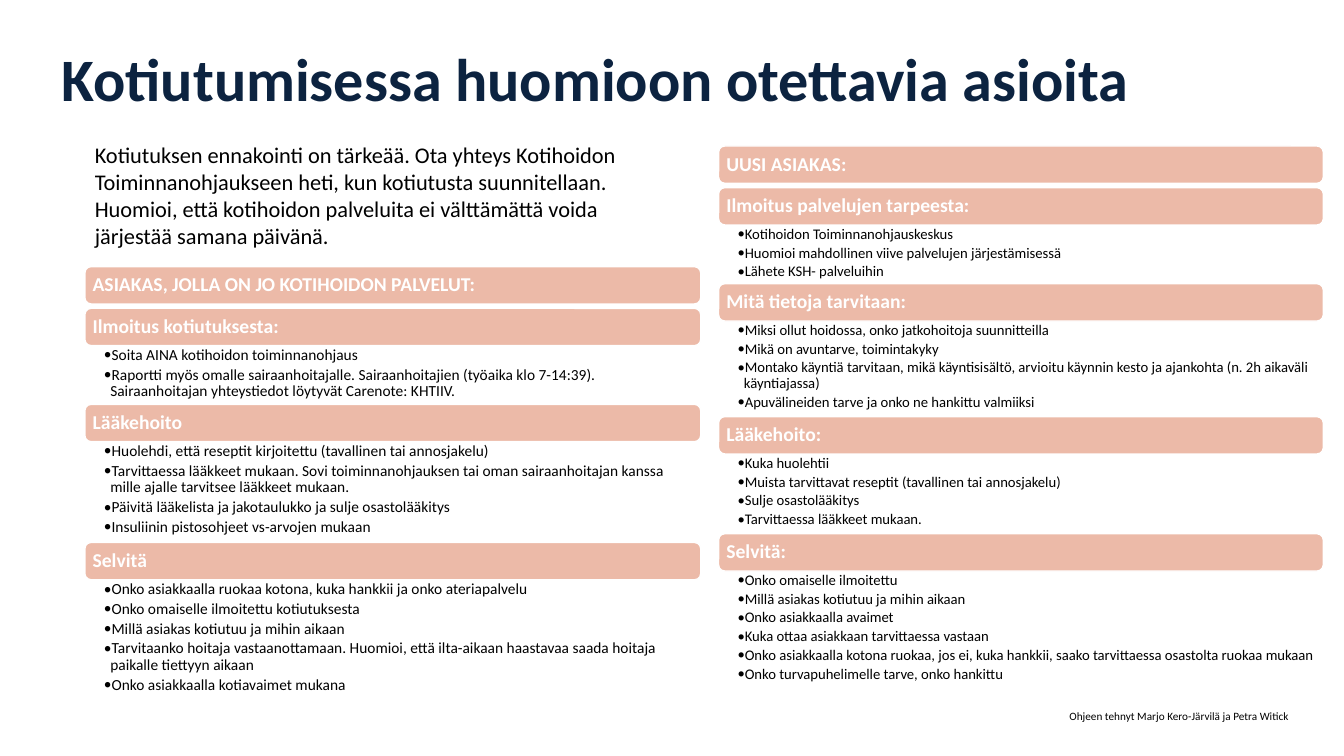
from lxml import etree
from pptx import Presentation
from pptx import util as u
from pptx.dml import color
from pptx.enum import shapes, text
from pptx.oxml import ns

FONT = "Calibri"
BAR = 0.94   # height of a heading bar
GAP = 0.11   # space below a bar that has no bullets

# Each part: heading, height of its bullet area, bullets
HOME = [
    ("ASIAKAS, JOLLA ON JO KOTIHOIDON PALVELUT:", GAP, []),
    ("Ilmoitus kotiutuksesta:", 1.48, [
        "Soita AINA kotihoidon toiminnanohjaus",
        "Raportti myös omalle sairaanhoitajalle. Sairaanhoitajien (työaika klo 7-14:39). "
        "Sairaanhoitajan yhteystiedot löytyvät Carenote: KHTIIV."]),
    ("Lääkehoito", 2.54, [
        "Huolehdi, että reseptit kirjoitettu (tavallinen tai annosjakelu)",
        "Tarvittaessa lääkkeet mukaan. Sovi toiminnanohjauksen tai oman sairaanhoitajan "
        "kanssa mille ajalle tarvitsee lääkkeet mukaan.",
        "Päivitä lääkelista ja jakotaulukko ja sulje osastolääkitys",
        "Insuliinin pistosohjeet vs-arvojen mukaan"]),
    ("Selvitä", 3.05, [
        "Onko asiakkaalla ruokaa kotona, kuka hankkii ja onko ateriapalvelu",
        "Onko omaiselle ilmoitettu kotiutuksesta",
        "Millä asiakas kotiutuu ja mihin aikaan",
        "Tarvitaanko hoitaja vastaanottamaan. Huomioi, että ilta-aikaan haastavaa saada "
        "hoitaja paikalle tiettyyn aikaan",
        "Onko asiakkaalla kotiavaimet mukana"]),
]
NEW = [
    ("UUSI ASIAKAS:", GAP, []),
    ("Ilmoitus palvelujen tarpeesta:", 1.48, [
        "Kotihoidon Toiminnanohjauskeskus",
        "Huomioi mahdollinen viive palvelujen järjestämisessä",
        "Lähete KSH- palveluihin"]),
    ("Mitä tietoja tarvitaan:", 2.41, [
        "Miksi ollut hoidossa, onko jatkohoitoja suunnitteilla",
        "Mikä on avuntarve, toimintakyky",
        "Montako käyntiä tarvitaan, mikä käyntisisältö, arvioitu käynnin kesto ja "
        "ajankohta (n. 2h aikaväli käyntiajassa)",
        "Apuvälineiden tarve ja onko ne hankittu valmiiksi"]),
    ("Lääkehoito:", 2.01, [
        "Kuka huolehtii",
        "Muista tarvittavat reseptit (tavallinen tai annosjakelu)",
        "Sulje osastolääkitys",
        "Tarvittaessa lääkkeet mukaan."]),
    ("Selvitä:", 2.97, [
        "Onko omaiselle ilmoitettu",
        "Millä asiakas kotiutuu ja mihin aikaan",
        "Onko asiakkaalla avaimet",
        "Kuka ottaa asiakkaan tarvittaessa vastaan",
        "Onko asiakkaalla kotona ruokaa, jos ei, kuka hankkii, saako tarvittaessa "
        "osastolta ruokaa mukaan",
        "Onko turvapuhelimelle tarve, onko hankittu"]),
]


def rgb(code):
    return color.RGBColor.from_string(code)


def cms(*nums):
    return [u.Cm(n) for n in nums]


def style(para, size, code, bold=False):
    for run in para.runs:
        font = run.font
        font.name, font.size, font.bold = FONT, u.Pt(size), bold
        font.color.rgb = rgb(code)


def inset(frame, left, top, right, bottom):
    frame.margin_left, frame.margin_top, frame.margin_right, frame.margin_bottom = cms(
        left, top, right, bottom)


def bullet(para):
    para.level = 1
    para.line_spacing = 0.9
    props = para._p.get_or_add_pPr()
    props.set("marL", str(u.Cm(0.16)))
    props.set("indent", str(-u.Cm(0.16)))
    after = etree.SubElement(props, ns.qn("a:spcAft"))
    etree.SubElement(after, ns.qn("a:spcPct")).set("val", "20000")
    etree.SubElement(props, ns.qn("a:buFont")).set("typeface", FONT)
    etree.SubElement(props, ns.qn("a:buChar")).set("char", "•")


def title(slide, box, words):
    head = slide.shapes.title
    head.left, head.top, head.width, head.height = cms(*box)
    frame = head.text_frame
    frame.text = words
    frame.word_wrap = True
    frame.auto_size = text.MSO_AUTO_SIZE.NONE
    frame.vertical_anchor = text.MSO_ANCHOR.TOP
    inset(frame, 0, 0, 0, 0)
    para = frame.paragraphs[0]
    para.alignment = text.PP_ALIGN.LEFT
    para.line_spacing = 0.8
    style(para, 43, "0C2340", True)


def note(slide, box, words, size):
    frame = slide.shapes.add_textbox(*cms(*box)).text_frame
    frame.word_wrap = True
    frame.auto_size = text.MSO_AUTO_SIZE.SHAPE_TO_FIT_TEXT
    frame.text = words
    style(frame.paragraphs[0], size, "000000")


def bar(slide, left, top, width, words):
    shape = slide.shapes.add_shape(
        shapes.MSO_SHAPE.ROUNDED_RECTANGLE, *cms(left, top, width, BAR))
    shape.shadow.inherit = False
    shape.fill.solid()
    shape.fill.fore_color.rgb = rgb("ECBAA8")
    shape.line.color.rgb = rgb("FFFFFF")
    shape.line.width = u.Pt(1)
    frame = shape.text_frame
    frame.text = words
    frame.vertical_anchor = text.MSO_ANCHOR.MIDDLE
    inset(frame, 0.15, 0.15, 0.15, 0.15)
    para = frame.paragraphs[0]
    para.alignment = text.PP_ALIGN.LEFT
    para.line_spacing = 0.9
    style(para, 14, "FFFFFF", True)


def points(slide, box, items, size, right):
    frame = slide.shapes.add_textbox(*cms(*box)).text_frame
    frame.word_wrap = True
    inset(frame, 0.48, 0.04, right, 0.04)
    frame.text = "\n".join(items)
    for para in frame.paragraphs:
        bullet(para)
        style(para, size, "000000")


def column(slide, left, top, width, parts, size, right):
    for head, tall, items in parts:
        bar(slide, left, top, width, head)
        top += BAR
        if items:
            points(slide, (left, top, width, tall), items, size, right)
        top += tall


def main():
    deck = Presentation()
    deck.slide_width, deck.slide_height = cms(33.87, 19.05)
    slide = deck.slides.add_slide(deck.slide_layouts[5])

    # Title
    title(slide, (1.55, 1.4, 27.1, 2.7), "Kotiutumisessa huomioon otettavia asioita")
    # New client, on the right
    column(slide, 18.11, 3.68, 15.24, NEW, 10.5, 0.23)
    # Introduction and current client, on the left
    note(slide, (2.14, 3.43, 14.4, 3.76),
         "Kotiutuksen ennakointi on tärkeää. Ota yhteys Kotihoidon Toiminnanohjaukseen "
         "heti, kun kotiutusta suunnitellaan. Huomioi, että kotihoidon palveluita ei "
         "välttämättä voida järjestää samana päivänä.", 16)
    column(slide, 2.14, 6.72, 15.52, HOME, 11, 0.28)
    # Authors
    note(slide, (26.7, 17.75, 6.12, 0.6),
         "Ohjeen tehnyt Marjo Kero-Järvilä ja Petra Witick", 8)

    deck.save("out.pptx")


if __name__ == "__main__":
    main()
